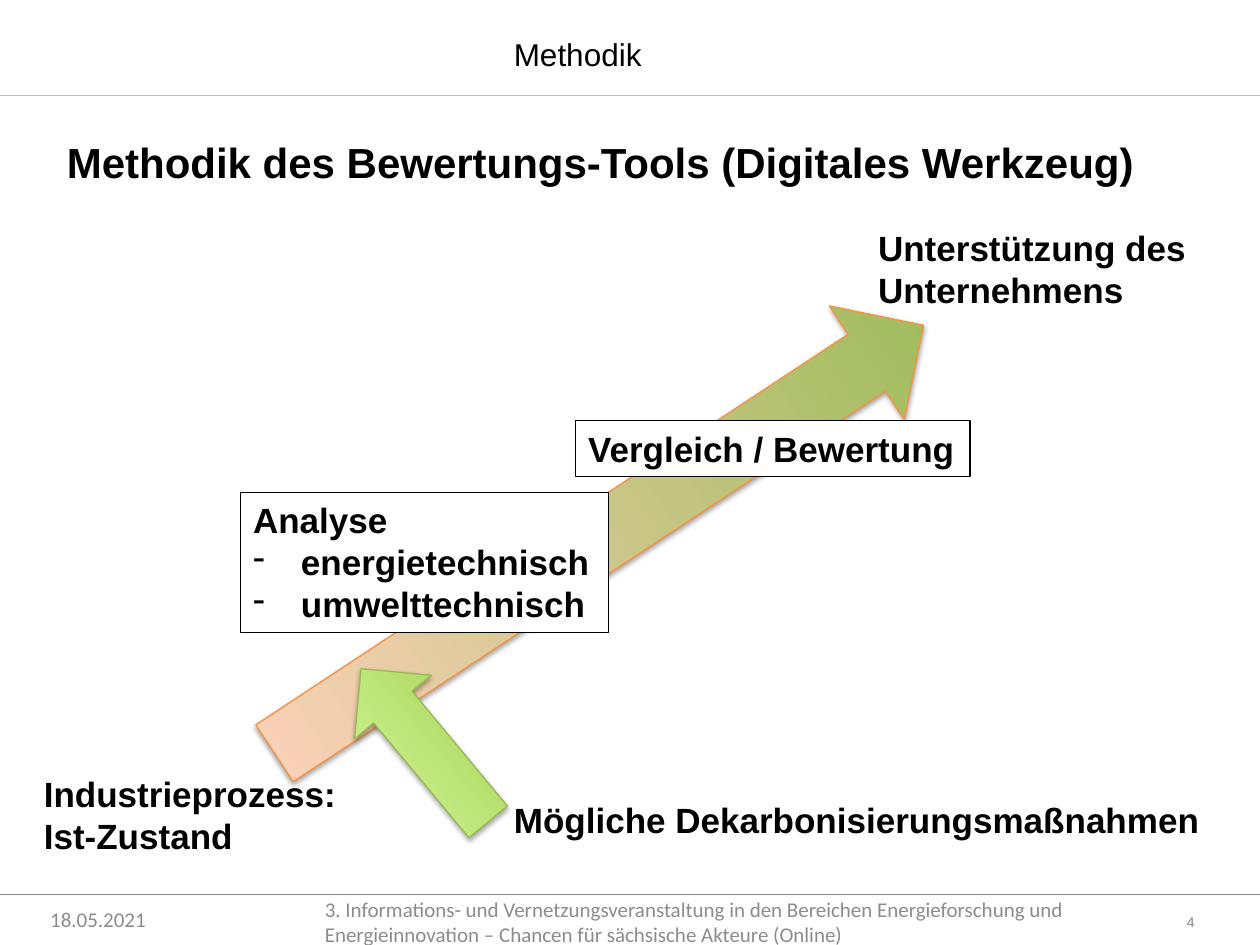
from lxml import etree
from pptx import Presentation
from pptx.dml.color import RGBColor
from pptx.enum.shapes import MSO_CONNECTOR as CONNECTOR, MSO_SHAPE as SHAPE
from pptx.enum.text import MSO_ANCHOR as ANCHOR, MSO_AUTO_SIZE as AUTO_SIZE, PP_ALIGN as ALIGN
from pptx.oxml import parse_xml
from pptx.oxml.ns import nsdecls, qn
from pptx.util import Inches, Pt

COLORS = {
    "text": "000000", "box": "FFFFFF", "footer": "8C8C8C", "number": "878786",
    "top_rule": "BFBFBF", "bottom_rule": "878786",
    "path_start": "FFD2BD", "path_end": "9BBB59", "path_line": "F69240",
    "measure_start": "A0CA4A", "measure_end": "DAFFA5", "measure_line": "98B955",
}


def color(name):
    return RGBColor.from_string(COLORS[name])


def write(shape, lines, size, bold=False, font="Arial", ink="text", align=ALIGN.LEFT,
          anchor=ANCHOR.TOP, wrap=False, fit=AUTO_SIZE.SHAPE_TO_FIT_TEXT):
    """Fill a shape with paragraphs; a leading "- " makes a bullet."""
    frame = shape.text_frame
    frame.word_wrap, frame.auto_size, frame.vertical_anchor = wrap, fit, anchor
    for i, line in enumerate(lines):
        para = frame.paragraphs[0] if i == 0 else frame.add_paragraph()
        para.alignment = align
        if line.startswith("- "):
            props = para._p.get_or_add_pPr()
            props.set("marL", str(Inches(0.38)))
            props.set("indent", str(-Inches(0.38)))
            etree.SubElement(props, qn("a:buFontTx"))
            etree.SubElement(props, qn("a:buChar"), char="-")
            line = line[2:]
        for j, part in enumerate(line.split("\n")):
            if j:
                para.add_line_break()
            run = para.add_run()
            run.text = part
            run.font.name, run.font.size, run.font.bold = font, Pt(size), bold
            run.font.color.rgb = color(ink)


prs = Presentation()
prs.slide_width, prs.slide_height = Inches(10), Inches(7.5)
slide = prs.slides.add_slide(prs.slide_layouts[5])
shapes = slide.shapes

# Header and footer rules
for y, ink in [(0.76, "top_rule"), (7.1, "bottom_rule")]:
    rule = shapes.add_connector(CONNECTOR.STRAIGHT, 0, Inches(y), Inches(10), Inches(y))
    rule.line.color.rgb = color(ink)
    rule.line.width = Pt(0.75)
    etree.SubElement(rule._element.spPr, qn("a:effectLst"))

# Footer: date, event, slide number
event = ("3. Informations- und Vernetzungsveranstaltung in den Bereichen Energieforschung "
         "und Energieinnovation – Chancen für sächsische Akteure (Online)")
for x, y, width, words, size, font, ink, align in [
    (0.3, 7.19, 1.24, "18.05.2021", 12, "Calibri", "footer", ALIGN.LEFT),
    (2.48, 7.21, 6.46, event, 12, "Calibri", "footer", ALIGN.LEFT),
    (8.95, 7.21, 0.63, "4", 8, "Arial", "number", ALIGN.RIGHT),
]:
    footer = shapes.add_textbox(Inches(x), Inches(y), Inches(width), Inches(0.21))
    write(footer, [words], size, font=font, ink=ink, align=align,
          anchor=ANCHOR.MIDDLE, wrap=True, fit=AUTO_SIZE.NONE)

# Section name and title
section = shapes.add_textbox(Inches(3.98), Inches(0.14), Inches(1.23), Inches(0.45))
write(section, ["Methodik"], 18)
section.text_frame.paragraphs[0].line_spacing = 1.3

title = shapes.title
title.left, title.top, title.width, title.height = map(Inches, (0.43, 1.03, 9.57, 0.5))
write(title, ["Methodik des Bewertungs-Tools (Digitales Werkzeug)"], 24, bold=True, wrap=True)

# Arrows: path from current state to support, and measures feeding into it
for x, y, width, height, rotation, name, angle, opacity, distance in [
    (1.67, 3.74, 6.17, 1.08, 326.6, "path", 0, 38, 1.6),
    (2.58, 5.52, 1.58, 0.79, 230.3, "measure", 90, 35, 1.8),
]:
    arrow = shapes.add_shape(SHAPE.RIGHT_ARROW, Inches(x), Inches(y), Inches(width), Inches(height))
    arrow.rotation = rotation
    arrow.fill.gradient()
    arrow.fill.gradient_angle = angle
    for stop, end, position in zip(arrow.fill.gradient_stops, ("start", "end"), (0, 1)):
        stop.color.rgb = color(f"{name}_{end}")
        stop.position = position
    arrow.line.color.rgb = color(f"{name}_line")
    arrow.line.width = Pt(0.75)
    arrow.shadow.inherit = False
    arrow._element.spPr.find(qn("a:effectLst")).append(parse_xml(
        f'<a:outerShdw {nsdecls("a")} blurRad="{Pt(3.1)}" dist="{Pt(distance)}" '
        f'dir="5400000" rotWithShape="0"><a:srgbClr val="000000">'
        f'<a:alpha val="{opacity * 1000}"/></a:srgbClr></a:outerShdw>'))

# Labels at the arrow ends
for x, y, width, height, lines in [
    (0.25, 6.08, 2.54, 0.77, ["Industrieprozess:\nIst-Zustand"]),
    (3.98, 6.29, 5.69, 0.44, ["Mögliche Dekarbonisierungsmaßnahmen"]),
    (6.87, 1.75, 2.85, 0.77, ["Unterstützung des", "Unternehmens"]),
]:
    label = shapes.add_textbox(Inches(x), Inches(y), Inches(width), Inches(height))
    write(label, lines, 20, bold=True)

# Framed steps on the path
for x, y, width, height, lines in [
    (1.91, 3.91, 2.92, 1.11, ["Analyse", "- energietechnisch", "- umwelttechnisch"]),
    (4.57, 3.34, 3.13, 0.44, ["Vergleich / Bewertung"]),
]:
    step = shapes.add_shape(SHAPE.RECTANGLE, Inches(x), Inches(y), Inches(width), Inches(height))
    step.shadow.inherit = False
    step.fill.solid()
    step.fill.fore_color.rgb = color("box")
    step.line.color.rgb = color("text")
    step.line.width = Pt(0.75)
    write(step, lines, 20, bold=True)

prs.save("out.pptx")
